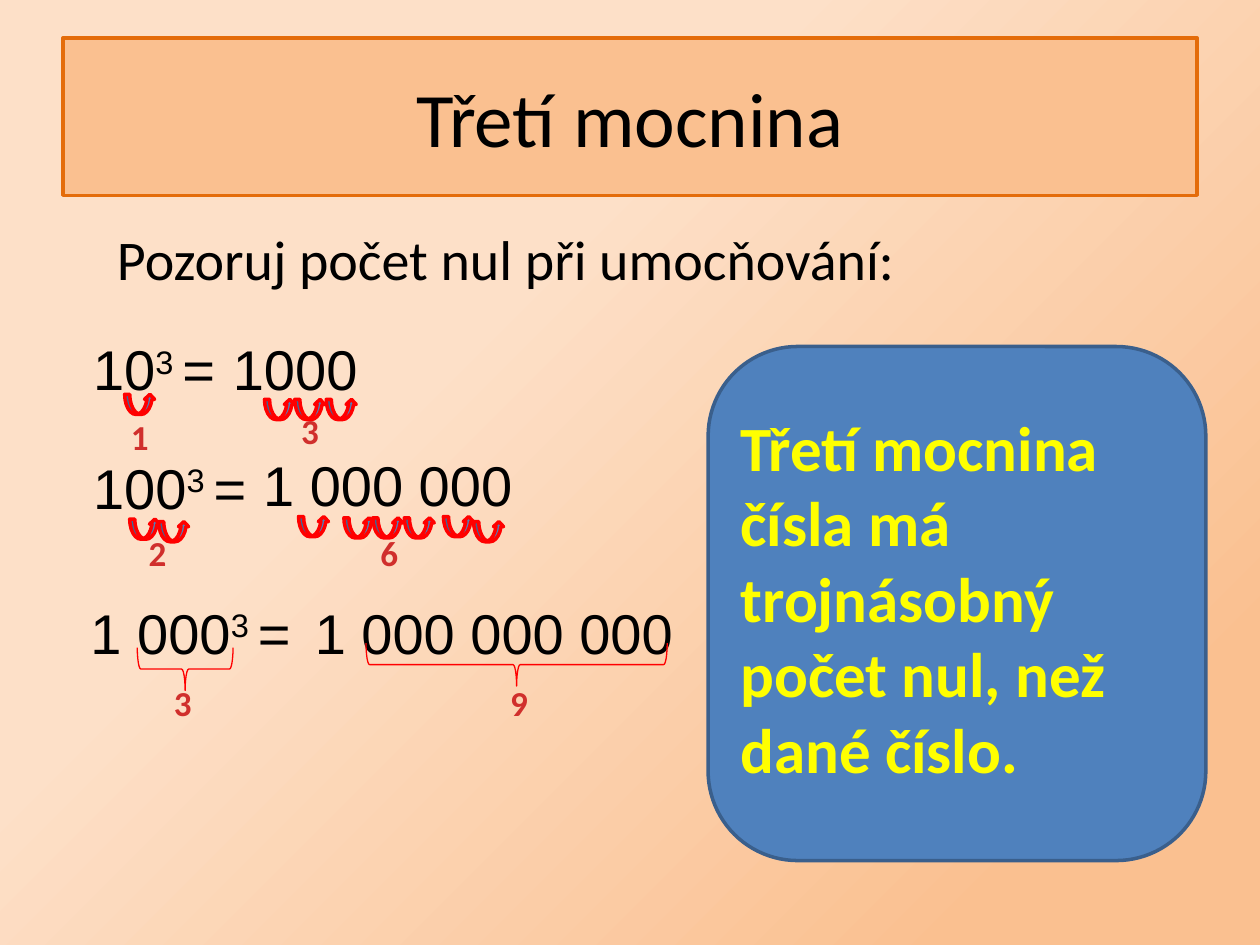
from pptx import Presentation
from pptx.dml.color import RGBColor
from pptx.enum import shapes, text
from pptx.util import Inches, Pt

COLORS = {
    "background_light": "FDE0C8",
    "peach": "FAC090",
    "orange": "E46C0A",
    "blue": "4F81BD",
    "dark_blue": "3A5F8C",
    "red": "FF0000",
    "count": "D02F2C",
    "yellow": "FFFF00",
    "black": "000000",
}


def add_shape(parent, kind, box, fill, line, width):
    shape = parent.add_shape(kind, *[Inches(length) for length in box])
    shape.shadow.inherit = False
    if fill:
        shape.fill.solid()
        shape.fill.fore_color.rgb = RGBColor.from_string(COLORS[fill])
    else:
        shape.fill.background()
    shape.line.color.rgb = RGBColor.from_string(COLORS[line])
    shape.line.width = Pt(width)
    return shape


def write(shape, words, size, font="Calibri", color="black", bold=False, centered=False, wrap=False):
    frame = shape.text_frame
    frame.text = words
    frame.word_wrap = wrap
    paragraph = frame.paragraphs[0]
    paragraph.alignment = text.PP_ALIGN.CENTER if centered else text.PP_ALIGN.LEFT
    for run in paragraph.runs:
        run.font.size = Pt(size)
        run.font.name = font
        run.font.bold = bold
        run.font.color.rgb = RGBColor.from_string(COLORS[color])
    return paragraph


presentation = Presentation()
presentation.slide_width = Inches(10)
presentation.slide_height = Inches(7.5)
slide = presentation.slides.add_slide(presentation.slide_layouts[6])

background = slide.background.fill
background.gradient()
background.gradient_angle = 315
gradient = [(0.36, "background_light"), (0.86, "peach")]
for stop, (position, color) in zip(background.gradient_stops, gradient):
    stop.position = position
    stop.color.rgb = RGBColor.from_string(COLORS[color])

title = add_shape(slide.shapes, shapes.MSO_SHAPE.ROUNDED_RECTANGLE, (0.5, 0.3, 9, 1.25), "peach", "orange", 2)
title.adjustments[0] = 0
title.text_frame.vertical_anchor = text.MSO_ANCHOR.MIDDLE
write(title, "Třetí mocnina", 44, centered=True, wrap=True)

intro = slide.shapes.add_textbox(Inches(0.83), Inches(1.73), Inches(8.58), Inches(0.76))
write(intro, "Pozoruj počet nul při umocňování:", 32, wrap=True)

zero_arrows = [
    (0.99, 3.13), (2.1, 3.17), (2.34, 3.17), (2.59, 3.17),
    (1.03, 4.12), (1.26, 4.14),
    (2.37, 4.1), (2.73, 4.11), (2.96, 4.11), (3.21, 4.11), (3.52, 4.1), (3.76, 4.14),
]
for left, top in zero_arrows:
    add_shape(slide.shapes, shapes.MSO_SHAPE.CURVED_UP_ARROW, (left, top, 0.24, 0.16), "blue", "red", 2)

zero_counts = [
    ("1", 0.94, 3.25), ("3", 2.29, 3.2),
    ("2", 1.08, 4.17), ("6", 2.92, 4.17),
    ("3", 1.28, 5.36), ("9", 3.95, 5.36),
]
for count, left, top in zero_counts:
    label = slide.shapes.add_textbox(Inches(left), Inches(top), Inches(0.34), Inches(0.44))
    write(label, count, 20, color="count", bold=True, centered=True)

results = [
    ("1000", 1.75, 2.61, 1.2),
    ("1 000 000", 1.99, 3.53, 2.19),
    ("1 000 000 000", 2.4, 4.7, 3.19),
]
for result, left, top, width in results:
    box = slide.shapes.add_textbox(Inches(left), Inches(top), Inches(width), Inches(0.64))
    write(box, result, 32, "Arial")

powers = [("10", 0.64, 2.61, 1.21), ("100", 0.64, 3.55, 1.46), ("1 000", 0.62, 4.7, 1.83)]
for base, left, top, width in powers:
    box = slide.shapes.add_textbox(Inches(left), Inches(top), Inches(width), Inches(0.64))
    paragraph = write(box, base, 32, "Arial")
    for part in ("3 ", "="):
        run = paragraph.add_run()
        run.text = part
        run.font.size = Pt(32)
        run.font.name = "Arial"
        run.font.color.rgb = RGBColor.from_string(COLORS["black"])
    paragraph.runs[1].font._element.set("baseline", "30000")

rule = slide.shapes.add_group_shape()
panel = add_shape(rule.shapes, shapes.MSO_SHAPE.ROUNDED_RECTANGLE, (5.62, 2.75, 3.95, 4.08), "blue", "dark_blue", 2)
panel.adjustments[0] = 0.18
rule_text = rule.shapes.add_textbox(Inches(5.78), Inches(3.19), Inches(3.63), Inches(3.13))
write(rule_text, "Třetí mocnina čísla má trojnásobný \vpočet nul, než dané číslo.", 36, color="yellow", bold=True, wrap=True)

for box in [(1.3, 4.93, 0.34, 0.76), (3.93, 4.08, 0.34, 2.39)]:
    brace = add_shape(slide.shapes, shapes.MSO_SHAPE.LEFT_BRACE, box, None, "red", 0.75)
    brace.rotation = 270

presentation.save("out.pptx")
